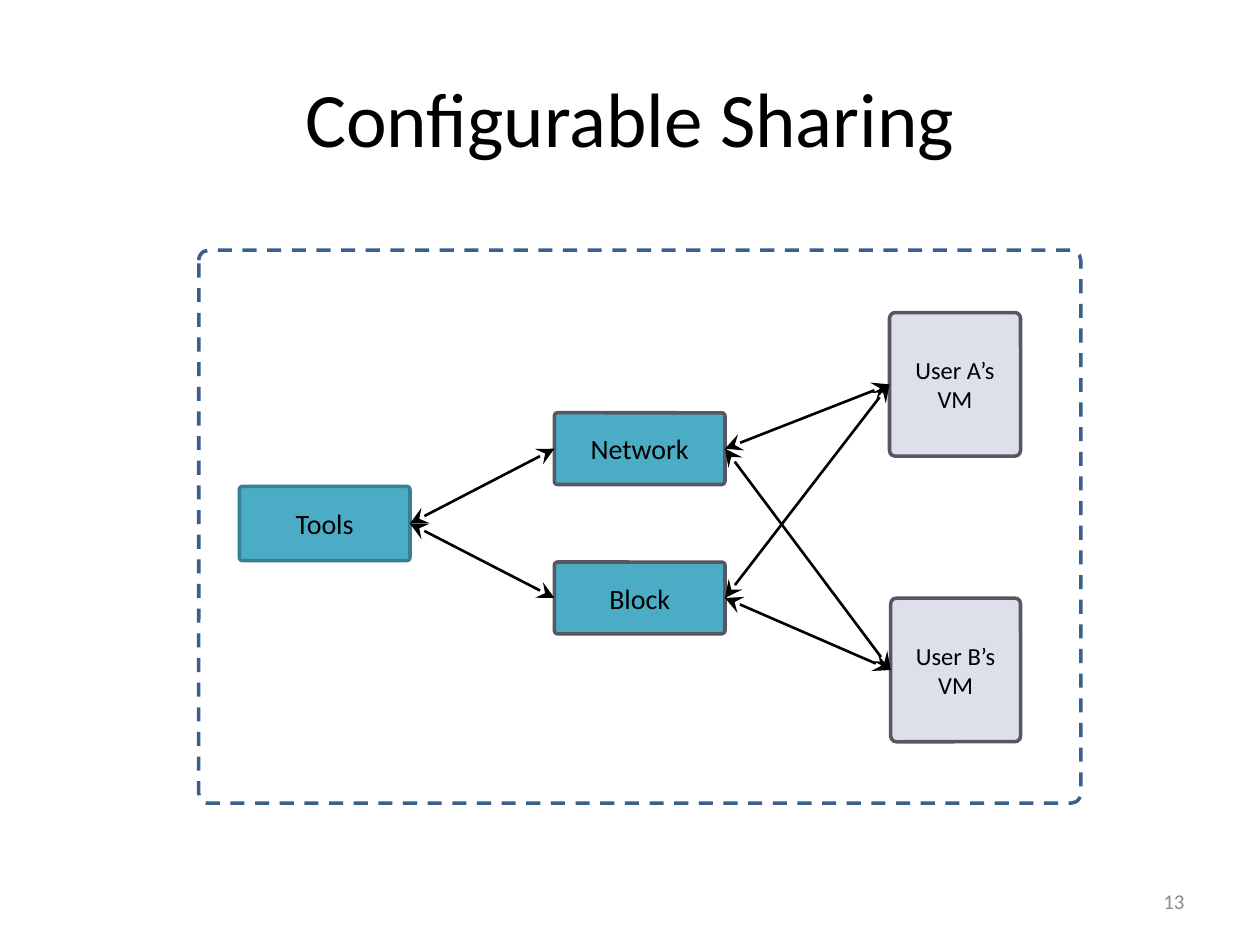
"""Build the Configurable Sharing slide: tools, shared services and user VMs."""
from lxml.etree import SubElement
from pptx import Presentation
from pptx.dml.color import RGBColor
from pptx.enum.dml import MSO_LINE_DASH_STYLE as Dash
from pptx.enum.shapes import MSO_CONNECTOR as Connector, MSO_SHAPE as Shape
from pptx.enum.text import MSO_ANCHOR as Anchor, PP_ALIGN as Align
from pptx.oxml.ns import qn
from pptx.util import Pt

BLACK = RGBColor(0x00, 0x00, 0x00)
GRAY = RGBColor(0x8C, 0x8C, 0x8C)
TEAL = RGBColor(0x4B, 0xAC, 0xC6)
DARK_TEAL = RGBColor(0x37, 0x7F, 0x92)
SLATE = RGBColor(0x59, 0x55, 0x62)
LAVENDER = RGBColor(0xDD, 0xDF, 0xEA)
NAVY = RGBColor(0x3A, 0x5F, 0x8C)
LEFT_SITE, RIGHT_SITE = 1, 3


class SlideBuilder:
    font = "Calibri"

    def __init__(self, deck):
        self.page = deck.slides.add_slide(deck.slide_layouts[5])

    def set_text(self, box, text, size, color=BLACK, align=Align.CENTER):
        frame = box.text_frame
        frame.text = text
        frame.word_wrap = True
        frame.vertical_anchor = Anchor.MIDDLE
        para = frame.paragraphs[0]
        para.alignment = align
        para.font.name = self.font
        para.font.size = Pt(size)
        para.font.color.rgb = color

    def title(self, text, left, top, width, height):
        box = self.page.shapes.title
        box.left, box.top, box.width, box.height = map(Pt, (left, top, width, height))
        self.set_text(box, text, 44)

    def label(self, text, left, top, width, height):
        box = self.page.shapes.add_textbox(*map(Pt, (left, top, width, height)))
        self.set_text(box, text, 12, GRAY, Align.RIGHT)

    def rounded(self, left, top, width, height, line, corner):
        box = self.page.shapes.add_shape(
            Shape.ROUNDED_RECTANGLE, *map(Pt, (left, top, width, height)))
        box.adjustments[0] = corner
        box.shadow.inherit = False
        box.line.color.rgb = line
        box.line.width = Pt(2)
        return box

    def node(self, text, left, top, width, height, fill=TEAL, line=SLATE, size=16):
        box = self.rounded(left, top, width, height, line, 0.044)
        box.fill.solid()
        box.fill.fore_color.rgb = fill
        self.set_text(box, text, size)
        return box

    def frame(self, left, top, width, height):
        box = self.rounded(left, top, width, height, NAVY, 0.018)
        box.fill.background()
        box.line.dash_style = Dash.DASH

    def link(self, source, target):
        arrow = self.page.shapes.add_connector(Connector.STRAIGHT, 0, 0, 0, 0)
        arrow.begin_connect(source, RIGHT_SITE)
        arrow.end_connect(target, LEFT_SITE)
        arrow.line.color.rgb = BLACK
        arrow.line.width = Pt(1.5)
        properties = arrow.element.spPr
        line = properties.get_or_add_ln()
        for end in ("a:headEnd", "a:tailEnd"):
            SubElement(line, qn(end), type="stealth", w="lg", len="lg")
        SubElement(properties, qn("a:effectLst"))


def main():
    deck = Presentation()
    deck.slide_width, deck.slide_height = Pt(720), Pt(540)
    slide = SlideBuilder(deck)
    slide.title("Configurable Sharing", 36, 21.6, 648, 90)
    slide.label("13", 516, 500.5, 168, 28.8)

    tools = slide.node("Tools", 136.8, 277.9, 97.5, 42.5, line=DARK_TEAL)
    services = [slide.node(name, 316.8, top, 97.5, 41)
                for name, top in (("Block", 321.2), ("Network", 235.9))]
    machines = [slide.node(f"User {user}’s VM", left, top, 583.2 - left, 82.1,
                           LAVENDER, size=14)
                for user, left, top in (("A", 508.3, 178.6), ("B", 509, 341.8))]
    for service in services:
        slide.link(tools, service)
        for machine in machines:
            slide.link(service, machine)
    slide.frame(113.6, 143, 504, 316)
    deck.save("out.pptx")


if __name__ == "__main__":
    main()
